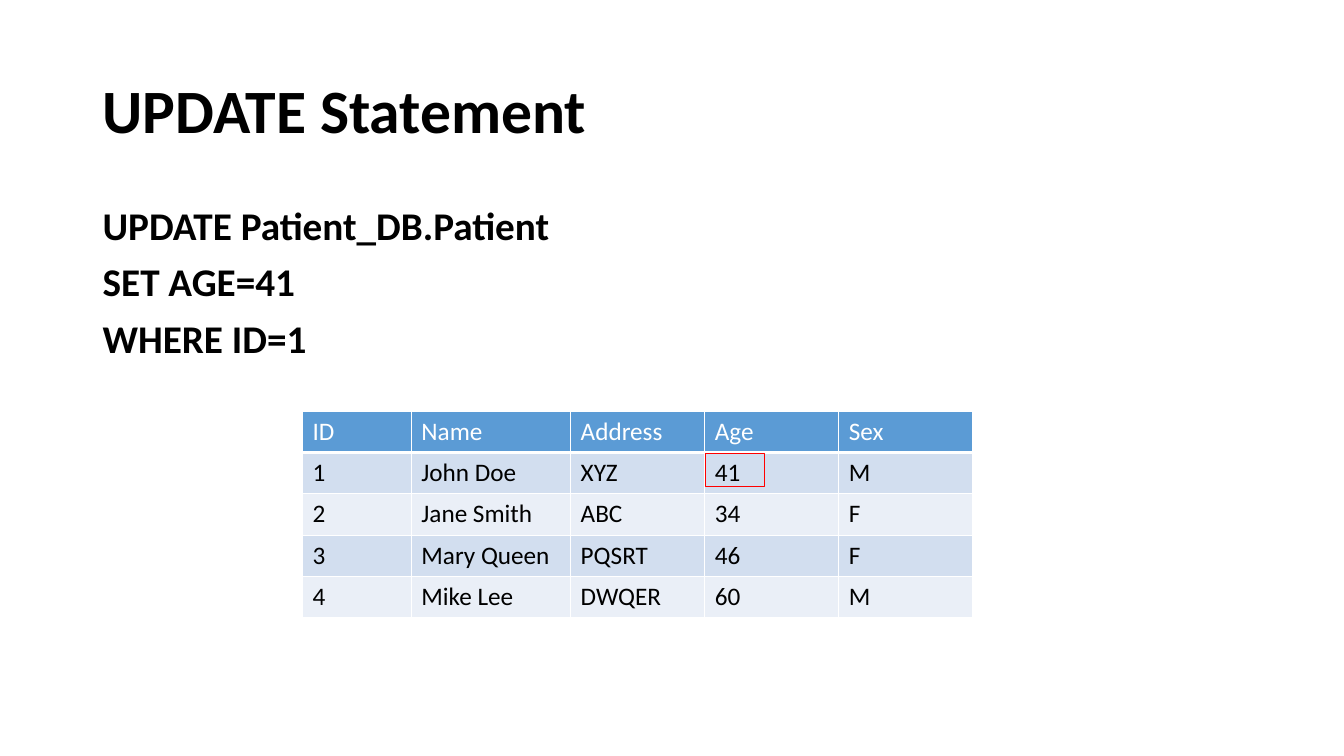
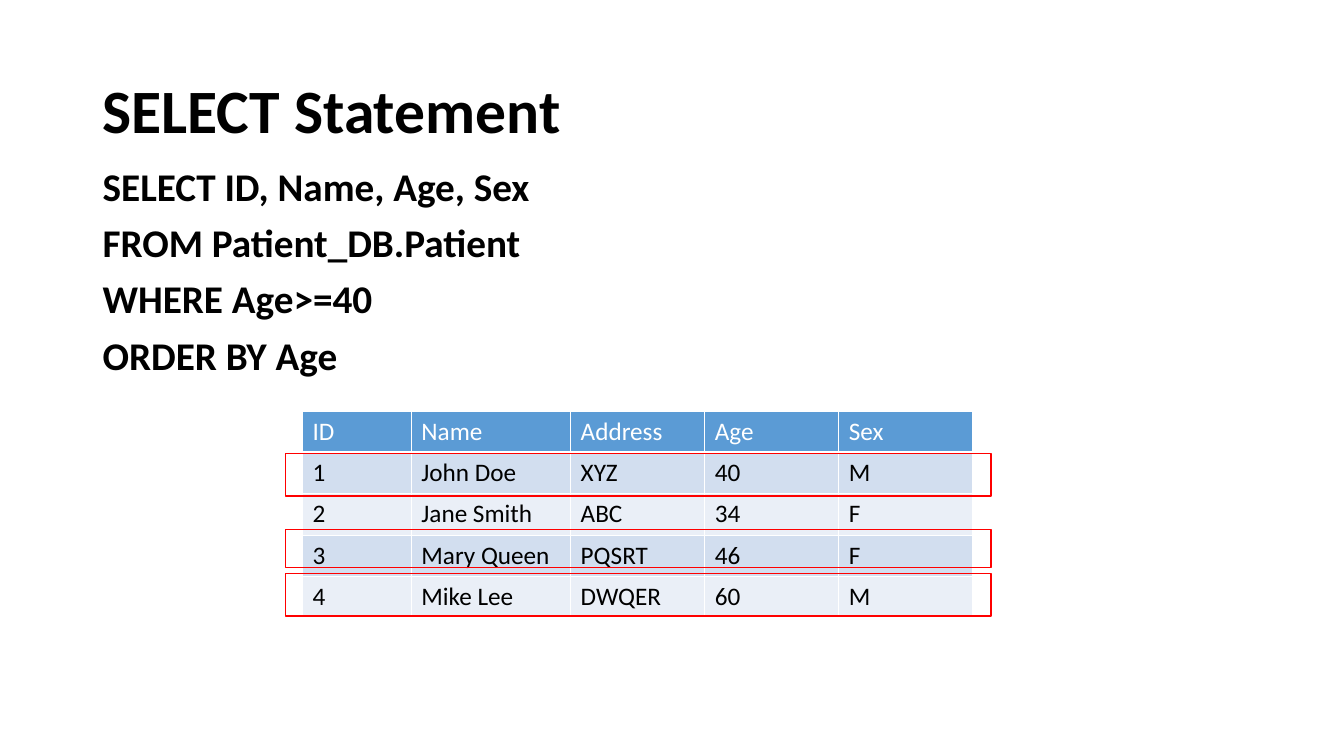
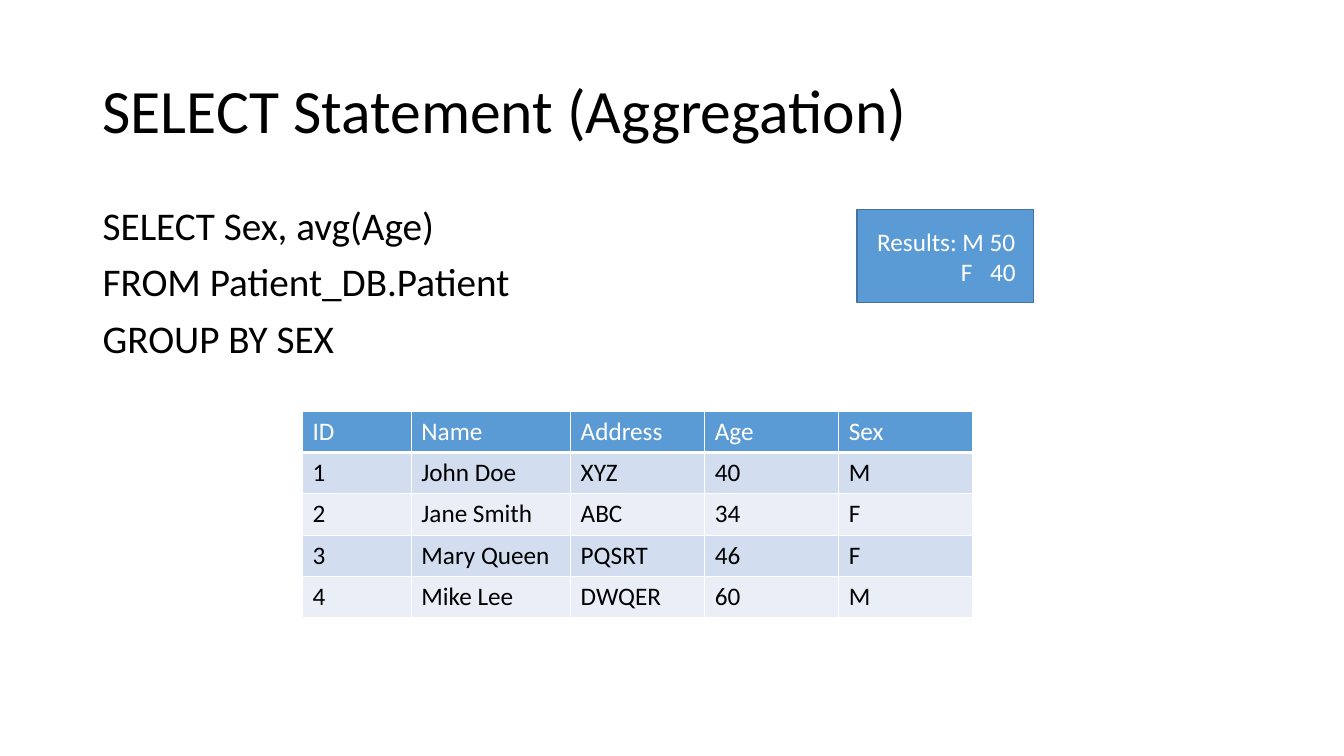
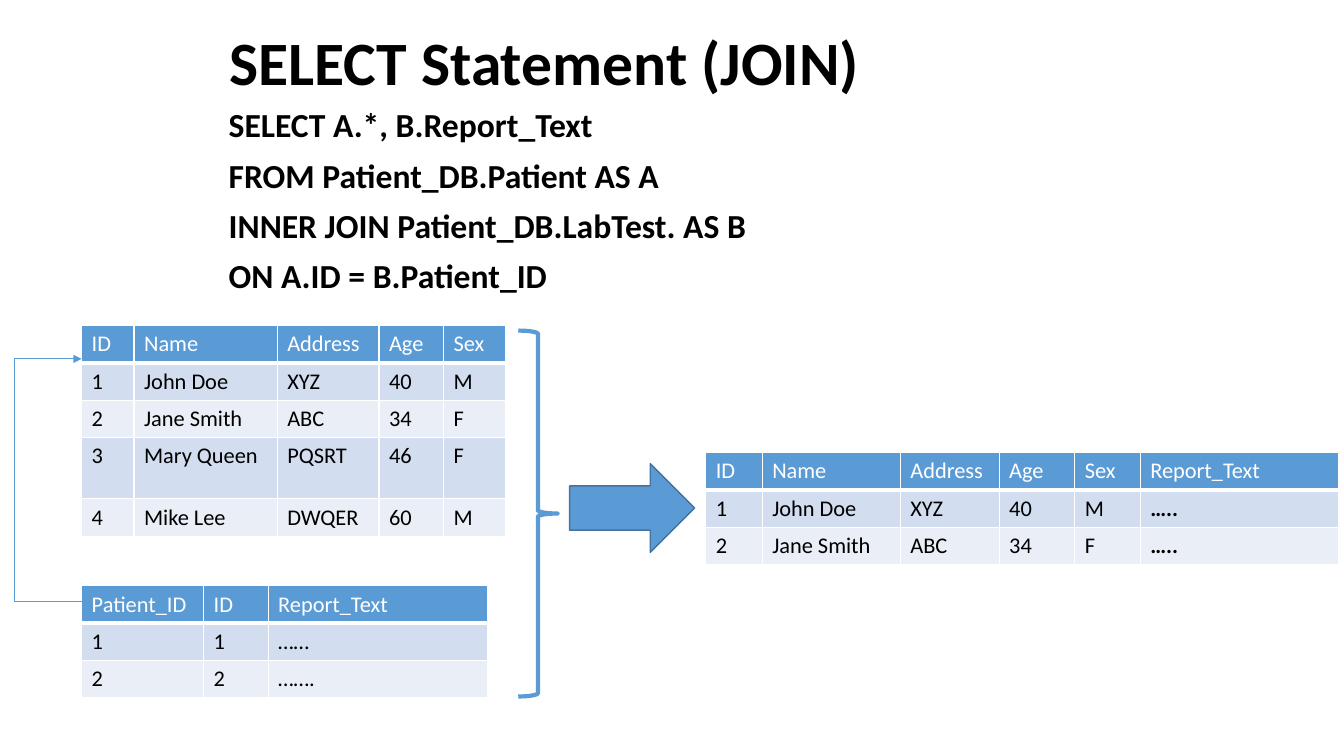
from dataclasses import dataclass
from itertools import pairwise
from typing import Optional

from lxml.etree import SubElement
from pptx import Presentation
from pptx.dml.color import RGBColor
from pptx.enum.shapes import MSO_CONNECTOR, MSO_SHAPE as SHAPE
from pptx.enum.text import MSO_ANCHOR as ANCHOR
from pptx.oxml.ns import qn
from pptx.util import Inches, Pt

FONT = "Calibri"
BLACK, WHITE, RED = "000000", "FFFFFF", "FF0000"
BLUE, BLUE_EDGE = "5B9BD5", "43739E"
BANDS = ("D2DEEF", "EAEFF7")
PATIENT_FIELDS = ("ID", "Name", "Address", "Age", "Sex")
WIDE_COLUMNS = (1.08, 1.58, 1.33, 1.33, 1.33)


@dataclass(frozen=True)
class Box:
    left: float
    top: float
    width: float
    height: float

    def lengths(self) -> tuple:
        return tuple(Inches(n) for n in (self.left, self.top, self.width, self.height))


@dataclass(frozen=True)
class Statement:
    title: str
    clauses: tuple[str, ...]
    title_box: Box = Box(0.92, 0.4, 11.5, 1.45)
    clause_box: Box = Box(0.92, 2, 11.5, 4.76)
    clause_size: int = 28
    bold: bool = True


@dataclass(frozen=True)
class Grid:
    left: float
    top: float
    columns: tuple[float, ...]
    row_heights: tuple[float, ...]
    rows: tuple[tuple[str, ...], ...]
    size: int = 16
    bold_column: Optional[int] = None


def colour(value: str) -> RGBColor:
    return RGBColor.from_string(value)


def set_font(paragraph, size: int, value: str, bold: bool = False) -> None:
    font = paragraph.font
    font.name, font.size, font.bold = FONT, Pt(size), bold
    font.color.rgb = colour(value)


def patients(john_age: str = "40") -> tuple[tuple[str, ...], ...]:
    return (
        PATIENT_FIELDS,
        ("1", "John Doe", "XYZ", john_age, "M"),
        ("2", "Jane Smith", "ABC", "34", "F"),
        ("3", "Mary Queen", "PQSRT", "46", "F"),
        ("4", "Mike Lee", "DWQER", "60", "M"),
    )


def add_text(slide, box: Box, lines: tuple[str, ...], size: int, bold: bool,
             anchor=ANCHOR.TOP, before: int = 0) -> None:
    frame = slide.shapes.add_textbox(*box.lengths()).text_frame
    frame.word_wrap = True
    frame.vertical_anchor = anchor
    frame.text = "\n".join(lines)
    for paragraph in frame.paragraphs:
        paragraph.line_spacing = 0.9
        paragraph.space_before = Pt(before)
        set_font(paragraph, size, BLACK, bold)


def add_statement(deck, statement: Statement):
    slide = deck.slides.add_slide(deck.slide_layouts[6])
    add_text(slide, statement.title_box, (statement.title,), 44, statement.bold, ANCHOR.MIDDLE)
    add_text(slide, statement.clause_box, statement.clauses, statement.clause_size,
             statement.bold, before=10)
    return slide


def set_borders(cell, bottom: int) -> None:
    properties = cell._tc.get_or_add_tcPr()
    for side, points in (("L", 1), ("R", 1), ("T", 1), ("B", bottom)):
        edge = SubElement(properties, qn(f"a:ln{side}"), w=str(Pt(points)))
        SubElement(SubElement(edge, qn("a:solidFill")), qn("a:srgbClr"), val=WHITE)


def add_grid(slide, grid: Grid) -> None:
    box = Box(grid.left, grid.top, sum(grid.columns), sum(grid.row_heights))
    table = slide.shapes.add_table(len(grid.rows), len(grid.columns), *box.lengths()).table
    table.first_row = table.horz_banding = False
    for column, width in zip(table.columns, grid.columns):
        column.width = Inches(width)
    for r, (row, height) in enumerate(zip(grid.rows, grid.row_heights)):
        table.rows[r].height = Inches(height)
        header = r == 0
        for c, text in enumerate(row):
            cell = table.cell(r, c)
            set_borders(cell, 3 if header else 1)
            cell.fill.solid()
            cell.fill.fore_color.rgb = colour(BLUE if header else BANDS[(r - 1) % 2])
            cell.text = text
            set_font(cell.text_frame.paragraphs[0], grid.size, WHITE if header else BLACK,
                     not header and c == grid.bold_column)


def add_patients(slide, john_age: str = "40") -> None:
    add_grid(slide, Grid(3, 4.08, WIDE_COLUMNS, (0.41,) * 5, patients(john_age), 18))


def add_figure(shapes, kind, box: Box, edge: str, weight: float = 1, fill: Optional[str] = None):
    figure = shapes.add_shape(kind, *box.lengths())
    figure.shadow.inherit = False
    if fill:
        figure.fill.solid()
        figure.fill.fore_color.rgb = colour(fill)
    else:
        figure.fill.background()
    figure.line.color.rgb = colour(edge)
    figure.line.width = Pt(weight)
    return figure


def add_results(slide) -> None:
    results = add_figure(slide.shapes, SHAPE.RECTANGLE, Box(8.5, 2.08, 1.75, 0.92),
                         BLUE_EDGE, fill=BLUE)
    frame = results.text_frame
    frame.word_wrap = True
    frame.vertical_anchor = ANCHOR.MIDDLE
    frame.margin_left = Inches(0.2)
    frame.text = "Results: M 50\n\tF\t40"
    for paragraph in frame.paragraphs:
        properties = paragraph._p.get_or_add_pPr()
        properties.set("algn", "l")
        stops = SubElement(properties, qn("a:tabLst"))
        for position in (0.83, 1.12):
            SubElement(stops, qn("a:tab"), pos=str(Inches(position)), algn="l")
        set_font(paragraph, 18, WHITE)


def add_key_link(slide, points: tuple[tuple[float, float], ...]) -> None:
    for start, end in pairwise(points):
        segment = slide.shapes.add_connector(
            MSO_CONNECTOR.STRAIGHT, *(Inches(n) for n in start + end))
        segment.line.color.rgb = colour(BLUE)
        segment.line.width = Pt(0.5)
        if end == points[-1]:
            SubElement(segment.line._get_or_add_ln(), qn("a:tailEnd"), type="triangle")
        SubElement(segment._element.spPr, qn("a:effectLst"))


def build_update(deck) -> None:
    slide = add_statement(deck, Statement(
        "UPDATE Statement", ("UPDATE Patient_DB.Patient", "SET AGE=41", "WHERE ID=1")))
    add_patients(slide, "41")
    add_figure(slide.shapes, SHAPE.RECTANGLE, Box(7, 4.5, 0.58, 0.33), RED)


def build_select(deck) -> None:
    slide = add_statement(deck, Statement(
        "SELECT Statement",
        ("SELECT ID, Name, Age, Sex", "FROM Patient_DB.Patient", "WHERE Age>=40", "ORDER BY Age"),
        clause_box=Box(0.92, 1.61, 9, 4.95)))
    add_patients(slide)
    matches = slide.shapes.add_group_shape()
    for top, height in ((4.5, 0.42), (5.69, 0.42), (5.25, 0.38)):
        add_figure(matches.shapes, SHAPE.RECTANGLE, Box(2.83, top, 7, height), RED)


def build_aggregation(deck) -> None:
    slide = add_statement(deck, Statement(
        "SELECT Statement (Aggregation)",
        ("SELECT Sex, avg(Age)", "FROM Patient_DB.Patient", "GROUP BY SEX"), bold=False))
    add_patients(slide)
    add_results(slide)


def build_join(deck) -> None:
    slide = add_statement(deck, Statement(
        "SELECT Statement (JOIN)",
        ("SELECT A.*, B.Report_Text", "FROM Patient_DB.Patient AS A",
         "INNER JOIN Patient_DB.LabTest. AS B", "ON A.ID = B.Patient_ID"),
        Box(2.18, 0.03, 9, 1.25), Box(2.17, 1.03, 9, 4.95), 24))
    people = patients()
    lab_tests = (("Patient_ID", "ID", "Report_Text"), ("1", "1", "……"), ("2", "2", "……."))
    joined = tuple(row + (report,) for row, report in zip(people, ("Report_Text", "…..", "…..")))
    add_grid(slide, Grid(0.81, 3.23, (0.52, 1.42, 1.01, 0.64, 0.62),
                         (0.37, 0.37, 0.37, 0.61, 0.37), people))
    add_grid(slide, Grid(0.81, 5.81, (1.21, 0.64, 2.18), (0.37,) * 3, lab_tests))
    add_key_link(slide, ((0.81, 5.97), (0.14, 5.97), (0.14, 3.56), (0.81, 3.56)))
    add_grid(slide, Grid(7, 4.49, (0.56, 1.37, 0.98, 0.75, 0.65, 1.97), (0.37,) * 3, joined,
                         bold_column=5))
    add_figure(slide.shapes, SHAPE.RIGHT_ARROW, Box(5.65, 4.6, 1.24, 0.88), BLUE_EDGE, fill=BLUE)
    add_figure(slide.shapes, SHAPE.RIGHT_BRACE, Box(5.14, 3.28, 0.39, 3.63), BLUE, 3)


def main() -> None:
    deck = Presentation()
    deck.slide_width, deck.slide_height = Inches(13.33), Inches(7.5)
    for build in (build_update, build_select, build_aggregation, build_join):
        build(deck)
    deck.save("out.pptx")


if __name__ == "__main__":
    main()
